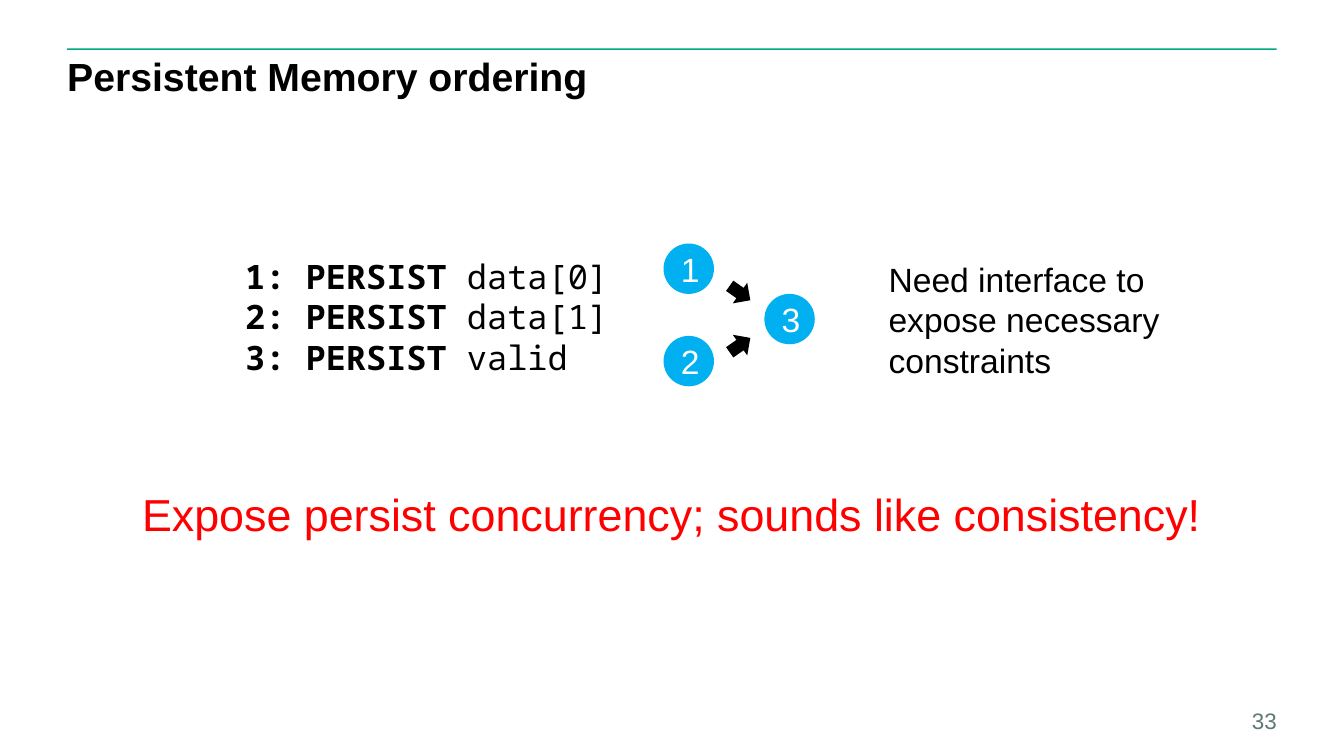
from dataclasses import dataclass

from pptx import Presentation
from pptx.dml.color import RGBColor
from pptx.enum.shapes import MSO_SHAPE as Preset
from pptx.enum.text import MSO_ANCHOR as Anchor, PP_ALIGN as Align
from pptx.util import Inches, Pt

# The slide is a grid of 160 columns by 90 rows of square cells
COLUMNS = 160
SLIDE_WIDTH, SLIDE_HEIGHT = Inches(13.33), Inches(7.5)
CELL = SLIDE_WIDTH / COLUMNS
MARGIN, CONTENT = 8, 144
SANS, MONO = "Arial", "Noto Sans Mono"
BLACK, WHITE, RED = "000000", "FFFFFF", "FF0000"
GREEN, BLUE, GREY = "01A982", "00B0F0", "5F7A76"


@dataclass(frozen=True)
class Box:
    column: float
    row: float
    width: float
    height: float

    def lengths(self) -> tuple[int, ...]:
        return tuple(round(value * CELL)
                     for value in (self.column, self.row, self.width, self.height))


@dataclass(frozen=True)
class Node:
    label: str
    column: float
    row: float


@dataclass(frozen=True)
class Arrow:
    row: float
    rotation: float


@dataclass(frozen=True)
class Label:
    lines: tuple[str, ...]
    box: Box
    size: int = 24
    color: str = BLACK
    align: Align = Align.LEFT
    wrap: bool = True
    inset: bool = True
    anchor: Anchor = Anchor.TOP


NODES = (Node("1", 79, 29), Node("2", 79, 40), Node("3", 91, 35))
ARROWS = (Arrow(33.4, 35), Arrow(39.6, 325))
PERSISTS = (("1: PERSIST ", "data[0]"), ("2: PERSIST ", "data[1]"),
            ("3: PERSIST ", "valid"))
LABELS = (
    Label(("Need interface to", "expose necessary", "constraints"),
          Box(104.6, 30.25, 36.1, 15.7), wrap=False),
    Label(("Expose persist concurrency; sounds like consistency!",),
          Box(MARGIN, 57.4, CONTENT, 7.7), size=32, color=RED, align=Align.CENTER),
    Label(("33",), Box(145, 84.4, 7, 3), size=16, color=GREY,
          align=Align.RIGHT, wrap=False, inset=False, anchor=Anchor.BOTTOM),
)


def rgb(color: str) -> RGBColor:
    return RGBColor.from_string(color)


def format_run(run, size: float, color: str, font: str = SANS, bold: bool = False) -> None:
    run.font.name = font
    run.font.size = Pt(size)
    run.font.bold = bold
    run.font.color.rgb = rgb(color)


def clear_insets(frame) -> None:
    frame.margin_left = frame.margin_right = 0
    frame.margin_top = frame.margin_bottom = 0


def add_preset(slide, preset: Preset, box: Box, color: str):
    shape = slide.shapes.add_shape(preset, *box.lengths())
    shape.shadow.inherit = False
    shape.fill.solid()
    shape.fill.fore_color.rgb = rgb(color)
    shape.line.fill.background()
    return shape


def add_title(slide, text: str) -> None:
    title = slide.shapes.title
    title.left, title.top, title.width, title.height = Box(
        MARGIN, 6.9, CONTENT, 5.4).lengths()
    frame = title.text_frame
    frame.text = text
    frame.vertical_anchor = Anchor.TOP
    clear_insets(frame)
    paragraph = frame.paragraphs[0]
    paragraph.alignment = Align.LEFT
    paragraph.line_spacing = 0.9
    format_run(paragraph.runs[0], 28, BLACK, bold=True)


def add_node(slide, node: Node) -> None:
    circle = add_preset(slide, Preset.OVAL, Box(node.column, node.row, 6, 6), BLUE)
    frame = circle.text_frame
    frame.text = node.label
    frame.vertical_anchor = Anchor.MIDDLE
    paragraph = frame.paragraphs[0]
    paragraph.alignment = Align.CENTER
    format_run(paragraph.runs[0], 24, WHITE)


def add_arrow(slide, arrow: Arrow) -> None:
    shape = add_preset(slide, Preset.RIGHT_ARROW, Box(86.6, arrow.row, 3, 3), BLACK)
    shape.rotation = arrow.rotation


def add_code(slide, box: Box) -> None:
    frame = slide.shapes.add_textbox(*box.lengths()).text_frame
    frame.word_wrap = True
    frame.text = "\n".join(command for command, _ in PERSISTS)
    for paragraph, (_, operand) in zip(frame.paragraphs, PERSISTS):
        format_run(paragraph.runs[0], 24, BLACK, MONO, bold=True)
        run = paragraph.add_run()
        run.text = operand
        format_run(run, 24, BLACK, MONO)


def add_label(slide, label: Label) -> None:
    frame = slide.shapes.add_textbox(*label.box.lengths()).text_frame
    frame.word_wrap = label.wrap
    frame.vertical_anchor = label.anchor
    if not label.inset:
        clear_insets(frame)
    frame.text = "\n".join(label.lines)
    for paragraph in frame.paragraphs:
        paragraph.alignment = label.align
        format_run(paragraph.runs[0], label.size, label.color)


def main() -> None:
    presentation = Presentation()
    presentation.slide_width, presentation.slide_height = SLIDE_WIDTH, SLIDE_HEIGHT
    slide = presentation.slides.add_slide(presentation.slide_layouts[5])

    # Header rule and title
    add_preset(slide, Preset.RECTANGLE, Box(MARGIN, 5.75, CONTENT, 0.2), GREEN)
    add_title(slide, "Persistent Memory ordering")

    # Ordering graph
    for node in NODES:
        add_node(slide, node)
    for arrow in ARROWS:
        add_arrow(slide, arrow)

    # Code, remarks and slide number
    add_code(slide, Box(28, 29.9, 49, 15.7))
    for label in LABELS:
        add_label(slide, label)

    presentation.save("out.pptx")


if __name__ == "__main__":
    main()
